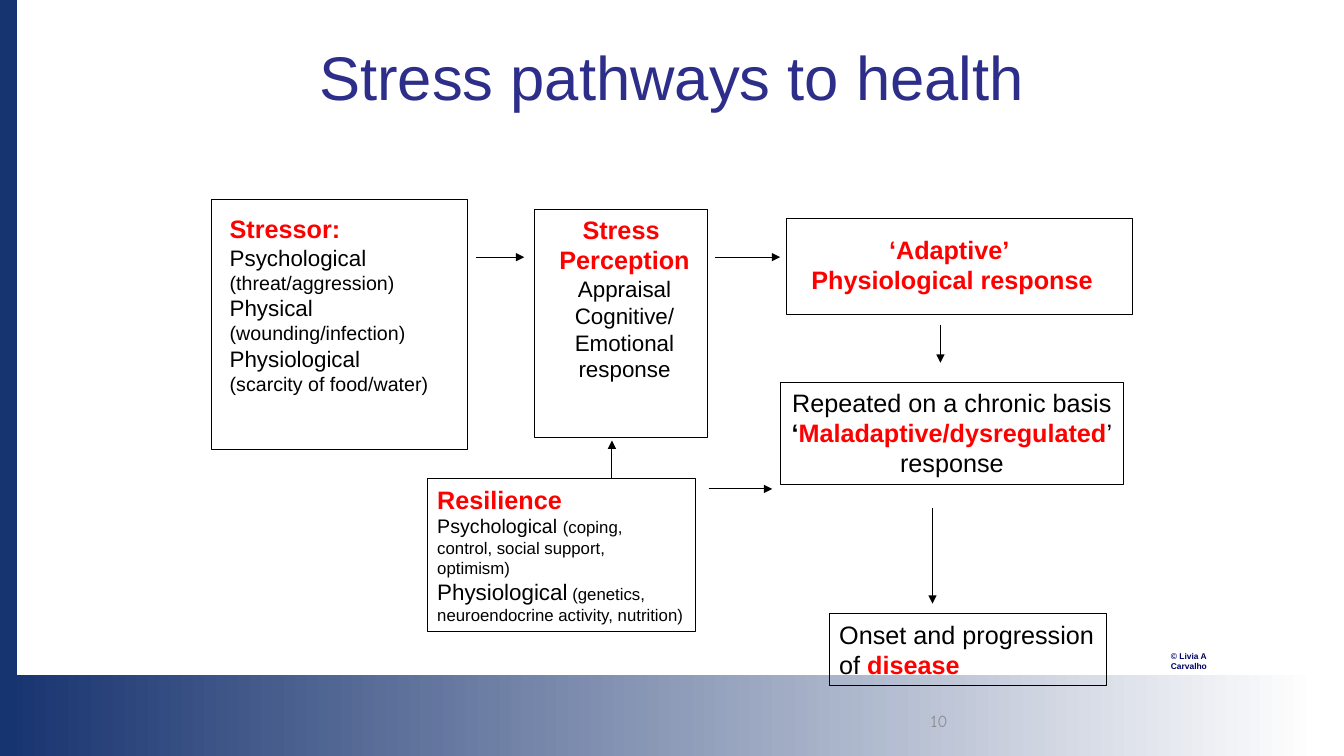
import pptx
import pptx.dml.color
import pptx.enum.shapes
import pptx.enum.text
import pptx.oxml
import pptx.oxml.ns
import pptx.util

Cm = pptx.util.Cm
ALIGN = pptx.enum.text.PP_ALIGN
ANCHOR = pptx.enum.text.MSO_ANCHOR
AUTO_SIZE = pptx.enum.text.MSO_AUTO_SIZE
RECTANGLE = pptx.enum.shapes.MSO_SHAPE.RECTANGLE

COLOURS = {"black": "000000", "red": "FF0000", "title": "2D2D8A", "navy": "000066",
           "number": "8C8C8C", "bar": "16346F", "band": "17336F", "white": "FFFFFF"}

# Style: size in points, colour, bold, font
STYLES = {
    "title": (44, "title", False, "Arial"),
    "key": (18, "red", True, "Arial"),
    "large": (18, "black", False, "Arial"),
    "large bold": (18, "black", True, "Arial"),
    "medium": (16, "black", False, "Arial"),
    "small": (14, "black", False, "Arial"),
    "tiny": (12, "black", False, "Arial"),
    "copyright": (6, "navy", True, "Arial"),
    "number": (12, "number", False, "Comic Neue"),
}

# Positions are left, top, width, height in centimetres.
SLIDE_SIZE = (33.87, 19.05)
SIDE_BAR = (0, 0, 0.43, 19.05)
FOOTER_BAND = (0, 17.02, 33.87, 2.03)

# Paragraphs are lists of (text, style) runs.
# Position, alignment, anchor, wrap, paragraphs
LABELS = [
    ((29.26, 16.28, 2.16, 0.51), ALIGN.LEFT, ANCHOR.TOP, True,
     [[("© Livia A Carvalho", "copyright")]]),
    ((18.21, 17.65, 5.92, 1.02), ALIGN.RIGHT, ANCHOR.MIDDLE, True, [[("10", "number")]]),
    ((1.7, 0.33, 30.48, 3.18), ALIGN.CENTER, ANCHOR.MIDDLE, True,
     [[("Stress pathways to health", "title")]]),
    ((5.54, 5.26, 5.54, 4.88), ALIGN.LEFT, ANCHOR.TOP, False, [
        [("Stressor:", "key")],
        [("Psychological", "medium")],
        [("(threat/aggression)", "small")],
        [("Physical", "medium")],
        [("(wounding/infection)", "small")],
        [("Physiological", "medium")],
        [("(scarcity of food/water)", "small")]]),
    ((13.82, 5.28, 3.84, 4.52), ALIGN.CENTER, ANCHOR.TOP, False, [
        [("Stress ", "key")],
        [("Perception", "key")],
        [("Appraisal", "medium")],
        [("Cognitive/", "medium")],
        [("Emotional", "medium")],
        [("response", "medium")]]),
    ((19.46, 5.77, 9.07, 1.8), ALIGN.CENTER, ANCHOR.TOP, True, [
        [("‘Adaptive’ ", "key")],
        [("Physiological response", "key")]]),
]

# Outlines around the stressor, perception and adaptive labels
FRAMES = [(5.33, 5.03, 6.45, 6.3), (13.46, 5.28, 4.37, 5.74), (19.81, 5.51, 8.74, 2.41)]

# Position, alignment, paragraphs
BOXES = [
    ((19.66, 9.63, 8.66, 2.57), ALIGN.CENTER, [
        [("Repeated on a chronic basis", "large")],
        [("‘", "large bold"), ("Maladaptive/dysregulated", "key"), ("’", "large")],
        [("response", "large")]]),
    ((20.9, 15.47, 6.99, 1.8), ALIGN.LEFT, [
        [("Onset and progression", "large")],
        [("of ", "large"), ("disease", "key")]]),
    ((10.77, 12.07, 6.76, 3.84), ALIGN.LEFT, [
        [("Resilience", "key")],
        [("Psychological ", "small"), ("(coping,", "tiny")],
        [("control, social support,", "tiny")],
        [("optimism)", "tiny")],
        [("Physiological", "medium"), (" (genetics,", "tiny")],
        [("neuroendocrine activity, nutrition)", "tiny")]]),
]

# Start x, start y, end x, end y
ARROWS = [
    (11.99, 6.48, 13.21, 6.48),
    (18.03, 6.48, 19.66, 6.48),
    (23.7, 8.18, 23.7, 9.14),
    (23.5, 12.8, 23.5, 15.21),
    (15.42, 12.07, 15.42, 11.1),
    (17.86, 12.32, 19.46, 12.32),
]


def colour(name):
    return pptx.dml.color.RGBColor.from_string(COLOURS[name])


def lengths(values):
    return [Cm(value) for value in values]


def write(frame, paragraphs, align, anchor=ANCHOR.TOP, wrap=False):
    frame.word_wrap = wrap
    frame.vertical_anchor = anchor
    frame.auto_size = AUTO_SIZE.SHAPE_TO_FIT_TEXT if anchor == ANCHOR.TOP else AUTO_SIZE.NONE
    for index, runs in enumerate(paragraphs):
        paragraph = frame.paragraphs[0] if index == 0 else frame.add_paragraph()
        paragraph.alignment = align
        for text, style in runs:
            run = paragraph.add_run()
            run.text = text
            size, tone, bold, typeface = STYLES[style]
            run.font.size = pptx.util.Pt(size)
            run.font.color.rgb = colour(tone)
            run.font.bold = bold
            run.font.name = typeface


def add_plain_rectangle(slide, position):
    """Add a rectangle with neither shadow, fill nor line."""
    rectangle = slide.shapes.add_shape(RECTANGLE, *lengths(position))
    rectangle.shadow.inherit = False
    rectangle.fill.background()
    rectangle.line.fill.background()
    return rectangle


def outline(line):
    line.color.rgb = colour("black")
    line.width = pptx.util.Pt(0.75)


def add_outlined_box(slide, position):
    box = add_plain_rectangle(slide, position)
    outline(box.line)
    return box


def add_arrow(slide, ends):
    arrow = slide.shapes.add_connector(pptx.enum.shapes.MSO_CONNECTOR.STRAIGHT, *lengths(ends))
    outline(arrow.line)
    namespace = pptx.oxml.ns.nsdecls("a")
    arrow.line._get_or_add_ln().append(
        pptx.oxml.parse_xml(f'<a:tailEnd {namespace} type="triangle"/>'))
    arrow._element.spPr.append(pptx.oxml.parse_xml(f"<a:effectLst {namespace}/>"))


def main():
    deck = pptx.Presentation()
    deck.slide_width, deck.slide_height = lengths(SLIDE_SIZE)
    slide = deck.slides.add_slide(deck.slide_layouts[6])

    band = add_plain_rectangle(slide, FOOTER_BAND)
    band.fill.gradient()
    band.fill.gradient_angle = 0
    for stop, (place, tone) in zip(band.fill.gradient_stops, [(0, "band"), (0.98, "white")]):
        stop.position = place
        stop.color.rgb = colour(tone)

    side_bar = add_plain_rectangle(slide, SIDE_BAR)
    side_bar.fill.solid()
    side_bar.fill.fore_color.rgb = colour("bar")

    for position, align, anchor, wrap, paragraphs in LABELS:
        label = slide.shapes.add_textbox(*lengths(position))
        write(label.text_frame, paragraphs, align, anchor, wrap)
    for position in FRAMES:
        add_outlined_box(slide, position)
    for position, align, paragraphs in BOXES:
        write(add_outlined_box(slide, position).text_frame, paragraphs, align)
    for ends in ARROWS:
        add_arrow(slide, ends)

    deck.save("out.pptx")


if __name__ == "__main__":
    main()
